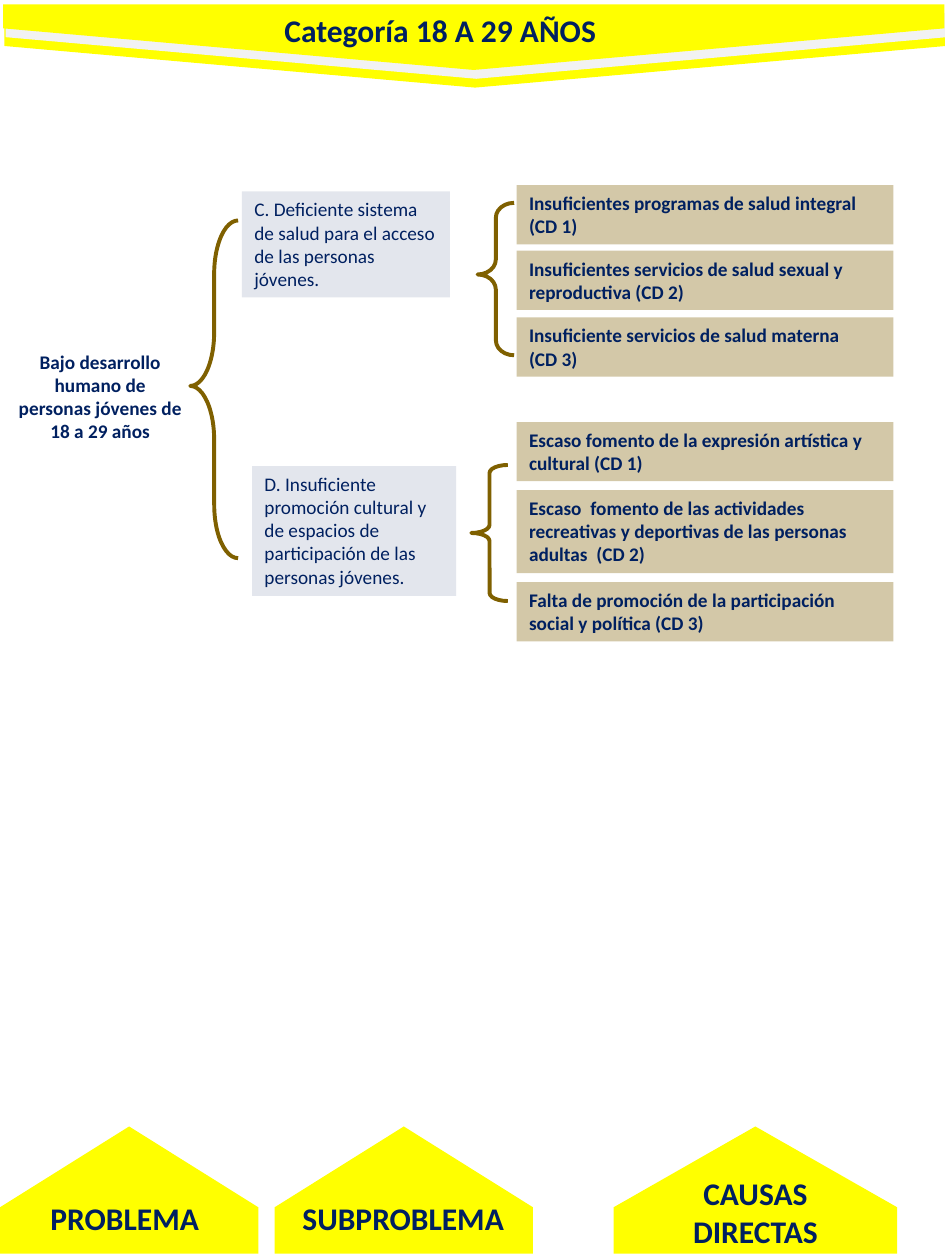
from lxml.etree import SubElement
from pptx import Presentation
from pptx.dml.color import RGBColor
from pptx.enum.shapes import MSO_SHAPE
from pptx.enum.text import MSO_ANCHOR, PP_ALIGN
from pptx.oxml.ns import qn
from pptx.util import Inches, Pt

NAVY = RGBColor(0x00, 0x20, 0x60)
BROWN = RGBColor(0x7F, 0x60, 0x00)
YELLOW = RGBColor(0xFF, 0xFF, 0x00)
GRAY = RGBColor(0xF2, 0xF2, 0xF2)

CAUSES = [
    (1.47, 0.47, "Insuficientes programas de salud integral\n(CD 1)"),
    (1.99, 0.47, "Insuficientes servicios de salud sexual y reproductiva (CD 2)"),
    (2.52, 0.47, "Insuficiente servicios de salud materna\n(CD 3)"),
    (3.35, 0.47, "Escaso fomento de la expresión artística y cultural (CD 1)"),
    (3.89, 0.66, "Escaso  fomento de las actividades recreativas y deportivas "
                 "de las personas adultas  (CD 2)"),
    (4.62, 0.47, "Falta de promoción de la participación social y política (CD 3)"),
]
SUBPROBLEMS = [
    (1.92, 1.52, 1.65, 0.84,
     "C. Deficiente sistema de salud para el acceso de las personas jóvenes."),
    (2, 3.7, 1.62, 1.03,
     "D. Insuficiente promoción cultural y de espacios de participación "
     "de las personas jóvenes."),
]
BRACES = [
    (1.51, 1.75, 0.38, 2.68, 1.12, 0.49),
    (3.79, 1.61, 0.29, 1.21, 0.41, 0.47),
    (3.74, 3.69, 0.29, 1.08, 0.22, 0.5),
]
BANDS = [(3.51, -3.3, YELLOW), (3.52, -3.37, GRAY), (3.5, -3.44, YELLOW)]
FOOTERS = [
    (0.52, 8.42, 2.05, (0.14, 9.47, 1.7, 0.4), "PROBLEMA"),
    (2.7, 8.42, 2.05, (2.24, 9.47, 1.92, 0.4), "SUBPROBLEMA"),
    (5.49, 8.32, 2.25, (5.27, 9.27, 1.45, 0.71), "CAUSAS DIRECTAS"),
]


def add_shape(slide, kind, box, adjusts=()):
    shape = slide.shapes.add_shape(kind, *map(Inches, box))
    shape.shadow.inherit = False
    for index, value in enumerate(adjusts):
        shape.adjustments[index] = value
    return shape


def paint(shape, color, alpha=100):
    shape.fill.solid()
    shape.fill.fore_color.rgb = color
    shape.line.fill.background()
    if alpha < 100:
        tint = shape.fill._xPr.find(qn("a:solidFill"))[0]
        SubElement(tint, qn("a:alpha"), val=str(alpha * 1000))


def write(shape, text, size, bold=True, align=PP_ALIGN.LEFT):
    frame = shape.text_frame
    frame.word_wrap = True
    frame.vertical_anchor = MSO_ANCHOR.TOP
    frame.text = text
    for para in frame.paragraphs:
        para.alignment = align
        for run in para.runs:
            run.font.name = "Calibri"
            run.font.size = Pt(size)
            run.font.bold = bold
            run.font.color.rgb = NAVY


def add_arrow(slide, box, turn, color):
    arrow = add_shape(slide, MSO_SHAPE.RIGHT_ARROW, box, (1, 0.635))
    arrow.rotation = turn
    paint(arrow, color)


def add_card(slide, box, text, color, alpha, bold):
    card = add_shape(slide, MSO_SHAPE.RECTANGLE, box)
    paint(card, color, alpha)
    write(card, text, 11, bold)


def add_brace(slide, box, adjusts):
    brace = add_shape(slide, MSO_SHAPE.LEFT_BRACE, box, adjusts)
    brace.fill.background()
    brace.line.color.rgb = BROWN
    brace.line.width = Pt(2.25)


def add_label(slide, box, text, size, align=PP_ALIGN.CENTER):
    label = slide.shapes.add_textbox(*map(Inches, box))
    write(label, text, size, align=align)


def main():
    deck = Presentation()
    deck.slide_width, deck.slide_height = Inches(7.5), Inches(10)
    slide = deck.slides.add_slide(deck.slide_layouts[6])

    for left, top, color in BANDS:
        add_arrow(slide, (left, top, 0.52, 7.47), 90, color)
    add_label(slide, (2.16, 0.04, 3.17, 0.4), "Categoría 18 A 29 AÑOS", 18,
              PP_ALIGN.LEFT)

    add_label(slide, (0.04, 2.73, 1.51, 0.84),
              "Bajo desarrollo humano de personas jóvenes de 18 a 29 años", 11)
    for *box, text in SUBPROBLEMS:
        add_card(slide, box, text, NAVY, 11, False)
    for top, height, text in CAUSES:
        add_card(slide, (4.1, top, 2.99, height), text, BROWN, 34, True)
    for *box, curve, middle in BRACES:
        add_brace(slide, box, (curve, middle))

    for left, top, length, box, text in FOOTERS:
        add_arrow(slide, (left, top, 1.01, length), 270, YELLOW)
        add_label(slide, box, text, 18)

    deck.save("out.pptx")


if __name__ == "__main__":
    main()
